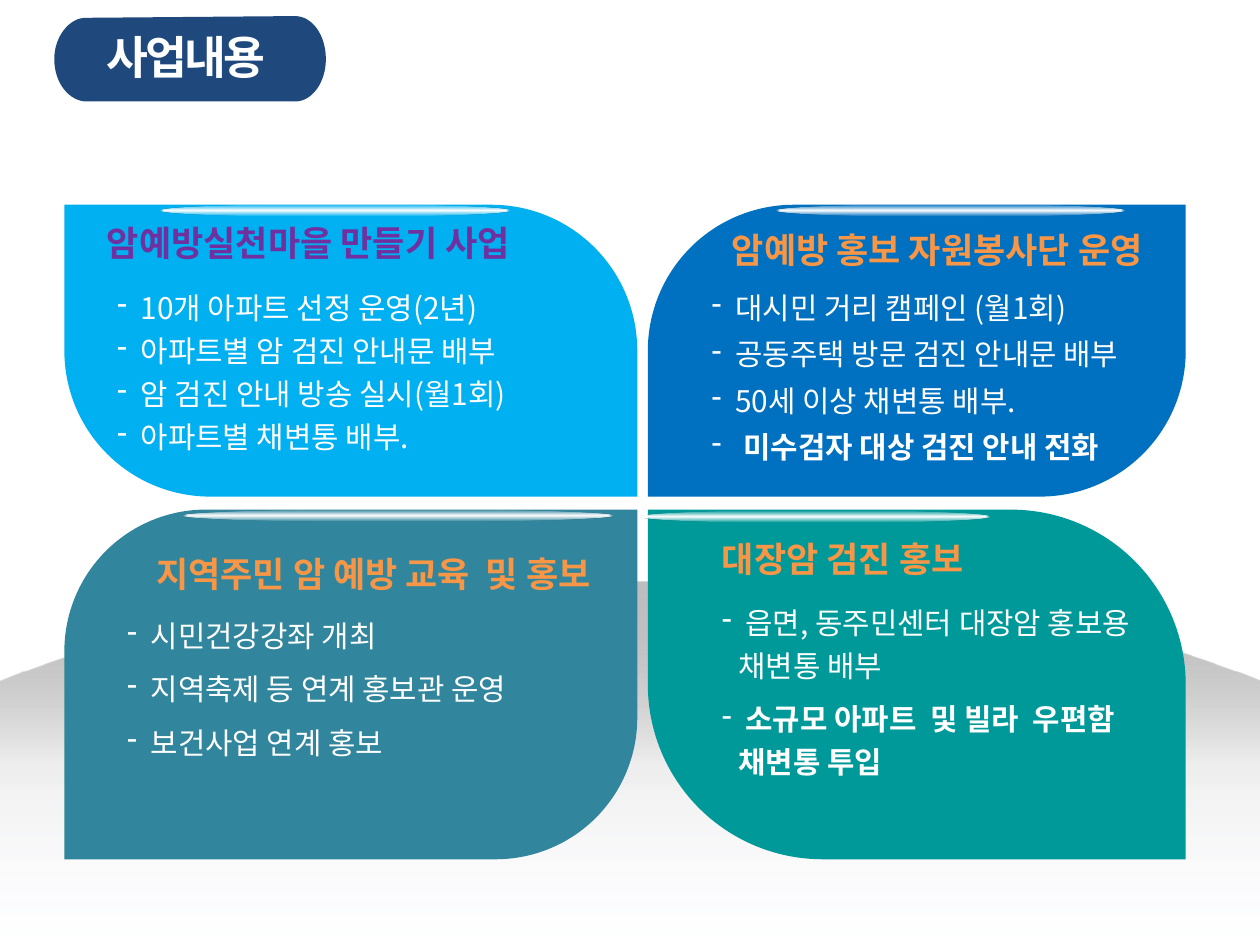
from dataclasses import dataclass

import pptx
import pptx.dml.color
import pptx.enum.shapes
import pptx.enum.text
import pptx.oxml
import pptx.oxml.ns
import pptx.util

Pt = pptx.util.Pt
Align = pptx.enum.text.PP_ALIGN
Anchor = pptx.enum.text.MSO_ANCHOR
Shape = pptx.enum.shapes.MSO_SHAPE
qn = pptx.oxml.ns.qn


@dataclass(frozen=True)
class Theme:
    white: str = "FFFFFF"
    navy: str = "1F497D"
    sky: str = "00B0F0"
    blue: str = "0070C0"
    steel: str = "31859C"
    teal: str = "009999"
    orange: str = "F79646"
    purple: str = "7030A0"
    latin: str = "Arial"
    korean: str = "Noto Sans CJK KR"
    title_size: float = 26
    heading_size: float = 20
    body_size: float = 17
    # Gradient stops: position, colour, opacity (percent)
    veil: tuple = ((0, "FFFFFF", 90), (100, "FFFFFF", 90))
    mound: tuple = ((0, "BFBFBF", 100), (50, "808080", 13), (100, "E1E8F5", 0))
    gloss: tuple = ((0, "FFFFFF", 100), (94, "FFFFFF", 0))


THEME = Theme()
DOWNWARD = '<a:lin ang="5400000" scaled="0"/>'
FROM_CENTRE = ('<a:path path="shape"><a:fillToRect '
               'l="50000" t="50000" r="50000" b="50000"/></a:path>')
BULLET_INDENT = 13.5
COLUMNS = ((36.8, 327.4), (370.2, 307.4))  # left, width
ROWS = ((117, 166.8), (291.2, 199.8))  # top, height

# Each step is one point for a straight line, or two controls and an end for a curve
MOUND = (
    ((360, 332.6),),
    ((506.9, 332.6), (637.2, 355), (720, 389.5)),
    ((720, 540),),
    ((0, 540),),
    ((0, 389.5),),
    ((82.8, 355), (213.1, 332.6), (360, 332.6)),
)
PILL = (
    ((49, 10.2),),
    ((168.5, 9.2),),
    ((178.6, 9.2), (186.2, 20.2), (186.2, 33.8)),
    ((186.2, 46.8), (178.6, 58), (168.5, 58)),
    ((49.7, 58),),
    ((39.6, 58), (31, 47.5), (31, 33.8)),
    ((31, 20.9), (39.6, 10.2), (49, 10.2)),
)
# column, row, colour, (top-left and bottom-right, other two) corner rounding
PETALS = (
    (1, 0, THEME.blue, (0.5, 0)),
    (1, 1, THEME.teal, (0, 0.5)),
    (0, 0, THEME.sky, (0, 0.5)),
    (0, 1, THEME.steel, (0.405, 0)),
)
GLOSSES = (
    (443, 117, 200.2, 6.5),
    (91.4, 117, 200.2, 6.5),
    (365.8, 291.8, 200.2, 6.5),
    (104.4, 291, 246.2, 7.2),
)
HEADINGS = (
    ("암예방 홍보 자원봉사단 운영", (411.1, 126.7, 277.9, 31.7), THEME.latin, THEME.orange, Align.LEFT),
    ("대장암 검진 홍보", (405.4, 303.1, 200.2, 31.7), THEME.latin, THEME.orange, Align.LEFT),
    ("암예방실천마을 만들기 사업", (54, 122.6, 272.2, 31.7), THEME.korean, THEME.purple, Align.LEFT),
    ("지역주민 암 예방 교육  및 홍보", (54, 311.8, 290.8, 31.7), THEME.latin, THEME.orange, Align.RIGHT),
)


def item(text, spacing=None, bold=False, indent=BULLET_INDENT):
    return dict(text=text, spacing=spacing, bold=bold, indent=indent, bullet=True)


def continuation(text, bold=False):
    return dict(text=text, spacing=1.2, bold=bold, indent=9.4, bullet=False)


BODIES = (
    ((59.8, 162, 289.4, 102.2), (
        item("10개 아파트 선정 운영(2년)"),
        item("아파트별 암 검진 안내문 배부", 1.2),
        item("암 검진 안내 방송 실시(월1회)", 1.2),
        item("아파트별 채변통 배부.", 1.2),
    )),
    ((399.6, 162, 289.4, 108), (
        item("대시민 거리 캠페인 (월1회)"),
        item("공동주택 방문 검진 안내문 배부", 1.3),
        item("50세 이상 채변통 배부.", 1.3),
        item("미수검자 대상 검진 안내 전화", 1.3, True, 18),
    )),
    ((65.5, 349.2, 294.5, 90), (
        item("시민건강강좌 개최"),
        item("지역축제 등 연계 홍보관 운영", 1.5),
        item("보건사업 연계 홍보", 1.5),
    )),
    ((405.4, 342, 272.2, 108), (
        item("읍면, 동주민센터 대장암 홍보용"),
        continuation("채변통 배부"),
        item("소규모 아파트  및 빌라  우편함", 1.5, True),
        continuation("채변통 투입", True),
    )),
)


def rgb(color):
    return pptx.dml.color.RGBColor.from_string(color)


def points(*lengths):
    return [Pt(length) for length in lengths]


def finish(shape, color=None):
    shape.shadow.inherit = False
    shape.line.fill.background()
    if color:
        shape.fill.solid()
        shape.fill.fore_color.rgb = rgb(color)


def fill_gradient(shape, stops, direction):
    """Fill with stops that carry opacity; direction is the a:lin or a:path element."""
    stop_xml = "".join(
        f'<a:gs pos="{position * 1000}"><a:srgbClr val="{color}">'
        f'<a:alpha val="{opacity * 1000}"/></a:srgbClr></a:gs>'
        for position, color, opacity in stops)
    gradient = pptx.oxml.parse_xml(
        f'<a:gradFill {pptx.oxml.ns.nsdecls("a")} rotWithShape="1">'
        f'<a:gsLst>{stop_xml}</a:gsLst>{direction}</a:gradFill>')
    shape.fill.background()
    properties = shape.element.spPr
    properties.replace(properties.find(qn("a:noFill")), gradient)


def add_outline(slide, steps):
    """Build the outline from its end points, then turn the curved steps into Béziers."""
    ends = [points(*step[-1]) for step in steps]
    builder = slide.shapes.build_freeform(*ends[0])
    builder.add_line_segments(ends[1:], close=True)
    shape = builder.convert_to_shape()
    segments = list(shape.element.spPr.iter(qn("a:lnTo")))
    for segment, step in zip(segments, steps[1:]):
        if len(step) == 3:
            bezier = segment.makeelement(qn("a:cubicBezTo"), {})
            for x, y in step:
                position = {"x": str(Pt(x) - shape.left), "y": str(Pt(y) - shape.top)}
                bezier.append(bezier.makeelement(qn("a:pt"), position))
            segment.getparent().replace(segment, bezier)
    return shape


def add_veil(slide):
    veil = slide.shapes.add_shape(Shape.RECTANGLE, *points(0, 66.2, 720, 465.1))
    finish(veil)
    fill_gradient(veil, THEME.veil, DOWNWARD)


def add_mound(slide):
    mound = add_outline(slide, MOUND)
    finish(mound)
    fill_gradient(mound, THEME.mound, DOWNWARD)


def add_petal(slide, column, row, color, corners):
    left, width = COLUMNS[column]
    top, height = ROWS[row]
    petal = slide.shapes.add_shape(Shape.ROUND_2_DIAG_RECTANGLE, *points(left, top, width, height))
    for index, rounding in enumerate(corners):
        petal.adjustments[index] = rounding
    finish(petal, color)


def add_gloss(slide, box):
    gloss = slide.shapes.add_shape(Shape.OVAL, *points(*box))
    finish(gloss)
    fill_gradient(gloss, THEME.gloss, FROM_CENTRE)


def add_frame(slide, box, anchor):
    frame = slide.shapes.add_textbox(*points(*box)).text_frame
    frame.word_wrap = True
    frame.vertical_anchor = anchor
    return frame


def add_run(paragraph, text, color, **formats):
    run = paragraph.add_run()
    run.text = text
    run.font.color.rgb = rgb(color)
    for name, value in formats.items():
        setattr(run.font, name, value)
    return run


def add_label(slide, text, box, font, color, alignment, size=THEME.heading_size):
    paragraph = add_frame(slide, box, Anchor.MIDDLE).paragraphs[0]
    paragraph.alignment = alignment
    return add_run(paragraph, text, color, name=font, size=Pt(size), bold=True)


def add_body(slide, box, lines):
    frame = add_frame(slide, box, Anchor.TOP)
    for index, line in enumerate(lines):
        paragraph = frame.add_paragraph() if index else frame.paragraphs[0]
        if line["spacing"]:
            paragraph.line_spacing = line["spacing"]
        properties = paragraph._p.get_or_add_pPr()
        properties.set("marL", str(Pt(line["indent"])))
        if line["bullet"]:
            properties.set("indent", str(-Pt(line["indent"])))
            properties.append(properties.makeelement(qn("a:buChar"), {"char": "-"}))
        add_run(paragraph, line["text"], THEME.white, name=THEME.korean,
                size=Pt(THEME.body_size), bold=line["bold"])


def main():
    presentation = pptx.Presentation()
    presentation.slide_width, presentation.slide_height = points(720, 540)
    slide = presentation.slides.add_slide(presentation.slide_layouts[6])
    add_veil(slide)
    add_mound(slide)
    for petal in PETALS:
        add_petal(slide, *petal)
    for box in GLOSSES:
        add_gloss(slide, box)
    for heading in HEADINGS:
        add_label(slide, *heading)
    for body in BODIES:
        add_body(slide, *body)
    finish(add_outline(slide, PILL), THEME.navy)
    title = add_label(slide, "사업내용", (41.5, 13, 129.6, 38.9), THEME.latin,
                      THEME.white, Align.CENTER, THEME.title_size)
    title.font._element.set("spc", "-150")
    presentation.save("out.pptx")


if __name__ == "__main__":
    main()
